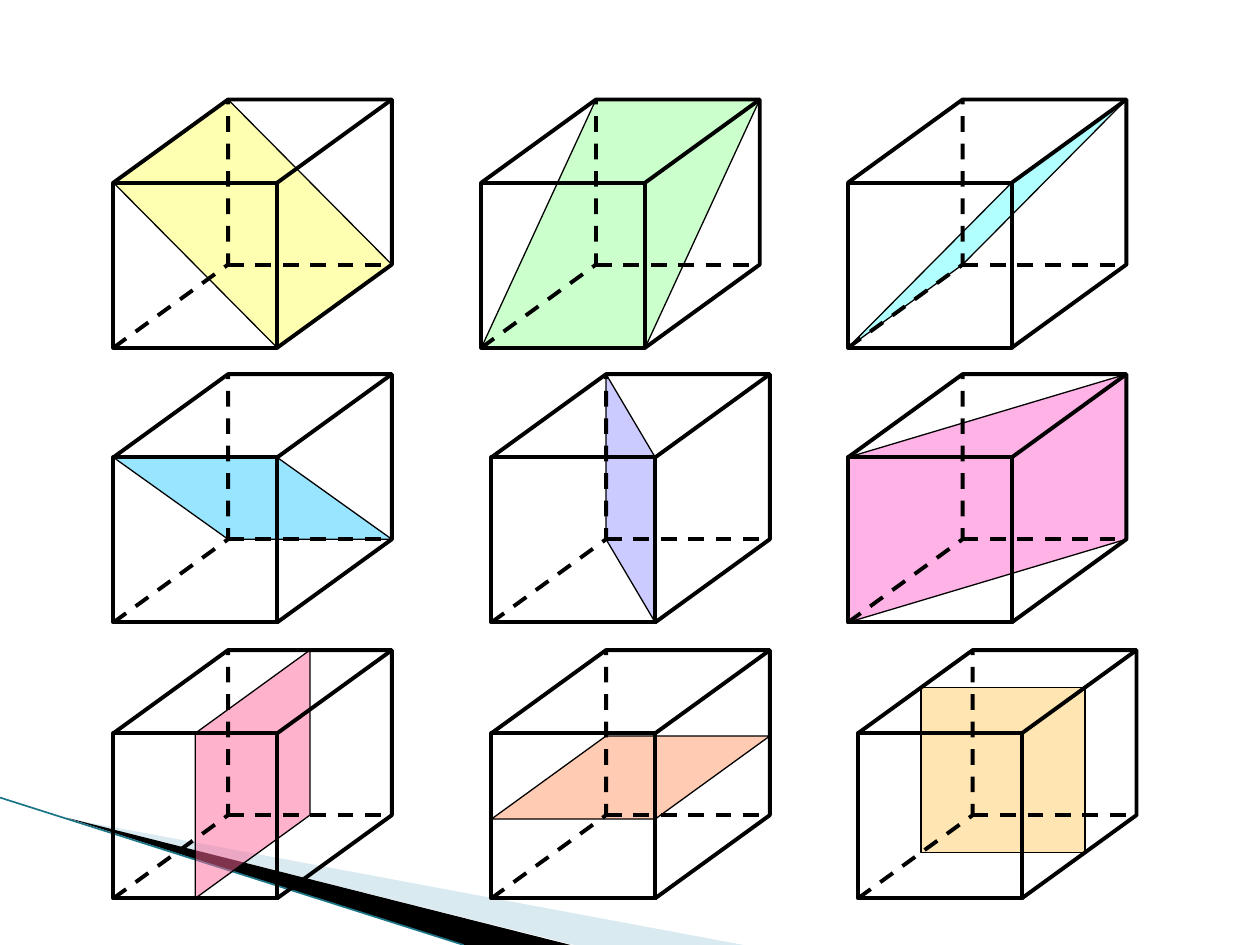
from lxml import etree
from pptx import Presentation, util as u
from pptx.dml.color import RGBColor
from pptx.enum import dml, shapes
from pptx.oxml.ns import qn

BLACK = RGBColor(0x00, 0x00, 0x00)
PALE_BLUE = RGBColor(0xA0, 0xCB, 0xDC)
TEAL = RGBColor(0x1B, 0x75, 0x87)

# Cube size in inches: front face, and the offset of the back face
WIDTH, HEIGHT = 1.3, 1.31
DEPTH_X, DEPTH_Y = 0.91, 0.66

ROWS = (1.45, 3.63, 5.82)  # top of each front face

# Corners in cube units (right, down, back)
FRONT_TOP_LEFT, FRONT_TOP_RIGHT = (0, 0, 0), (1, 0, 0)
FRONT_LOW_LEFT, FRONT_LOW_RIGHT = (0, 1, 0), (1, 1, 0)
BACK_TOP_LEFT, BACK_TOP_RIGHT = (0, 0, 1), (1, 0, 1)
BACK_LOW_LEFT, BACK_LOW_RIGHT = (0, 1, 1), (1, 1, 1)

# Each cube: row, left edge, section colour, section corners
CUBES = [
    (0, 0.9, RGBColor(0xFF, 0xFF, 0x66),
     (FRONT_TOP_LEFT, BACK_TOP_LEFT, BACK_LOW_RIGHT, FRONT_LOW_RIGHT)),
    (0, 3.82, RGBColor(0x99, 0xFF, 0x99),
     (BACK_TOP_LEFT, FRONT_LOW_LEFT, FRONT_LOW_RIGHT, BACK_TOP_RIGHT)),
    (0, 6.73, RGBColor(0x66, 0xFF, 0xFF),
     (FRONT_TOP_RIGHT, BACK_TOP_RIGHT, BACK_LOW_LEFT, FRONT_LOW_LEFT)),
    (1, 0.9, RGBColor(0x33, 0xCC, 0xFF),
     (FRONT_TOP_LEFT, BACK_LOW_LEFT, BACK_LOW_RIGHT, FRONT_TOP_RIGHT)),
    (1, 3.9, RGBColor(0x99, 0x99, 0xFF),
     (BACK_TOP_LEFT, FRONT_TOP_RIGHT, FRONT_LOW_RIGHT, BACK_LOW_LEFT)),
    (1, 6.73, RGBColor(0xFF, 0x66, 0xCC),
     (FRONT_TOP_LEFT, BACK_TOP_RIGHT, BACK_LOW_RIGHT, FRONT_LOW_LEFT)),
    (2, 0.9, RGBColor(0xFF, 0x66, 0x99),
     ((0.5, 0, 0), (0.5, 1, 0), (0.5, 1, 1), (0.5, 0, 1))),
    (2, 3.9, RGBColor(0xFF, 0x99, 0x66),
     ((0, 0.52, 1), (0, 0.52, 0), (1, 0.52, 0), (1, 0.52, 1))),
    (2, 6.81, RGBColor(0xFF, 0xCC, 0x66),
     ((0, 0, 0.55), (1, 0, 0.55), (1, 1, 0.55), (0, 1, 0.55))),
]


def project(origin, corner):
    """Turn a cube corner into a point on the slide, in inches."""
    right, down, back = corner
    return (origin[0] + WIDTH * right + DEPTH_X * back,
            origin[1] + HEIGHT * down - DEPTH_Y * back)


def set_line(shape, width, color=BLACK, dashed=False):
    shape.line.color.rgb = color
    shape.line.width = u.Pt(width)
    if dashed:
        shape.line.dash_style = dml.MSO_LINE.DASH


def set_fill(shape, color, opacity=100):
    shape.fill.solid()
    shape.fill.fore_color.rgb = color
    if opacity < 100:
        tint = shape.fill._xPr.find(".//" + qn("a:srgbClr"))
        etree.SubElement(tint, qn("a:alpha"), val=str(opacity * 1000))


def add_outline(parent, points, closed):
    points = [(u.Inches(x), u.Inches(y)) for x, y in points]
    builder = parent.build_freeform(*points[0])
    builder.add_line_segments(points[1:], close=closed)
    outline = builder.convert_to_shape()
    outline.shadow.inherit = False
    return outline


def add_area(parent, points, color, opacity=100, edge=0):
    area = add_outline(parent, points, True)
    set_fill(area, color, opacity)
    if edge:
        set_line(area, edge)
    else:
        area.line.fill.background()


def add_path(parent, points, dashed=False):
    path = add_outline(parent, points, False)
    path.fill.background()
    set_line(path, 2.25, dashed=dashed)


def add_edge(parent, start, end, width=2.25, color=BLACK, dashed=False):
    edge = parent.add_connector(shapes.MSO_CONNECTOR.STRAIGHT,
                                *[u.Inches(length) for length in (*start, *end)])
    set_line(edge, width, color, dashed)
    etree.SubElement(edge._element.spPr, qn("a:effectLst"))


def add_cube(page, origin):
    def place(*corners):
        return [project(origin, corner) for corner in corners]

    cube = page.shapes.add_group_shape().shapes
    # Visible faces
    front = cube.add_shape(shapes.MSO_SHAPE.RECTANGLE, *[
        u.Inches(length) for length in (*origin, WIDTH, HEIGHT)])
    front.shadow.inherit = False
    front.fill.background()
    set_line(front, 2.25)
    add_path(cube, place(FRONT_TOP_LEFT, BACK_TOP_LEFT, BACK_TOP_RIGHT,
                         BACK_LOW_RIGHT, FRONT_LOW_RIGHT))
    add_edge(cube, *place(FRONT_TOP_RIGHT, BACK_TOP_RIGHT))
    # Hidden edges
    add_edge(cube, *place(BACK_LOW_LEFT, BACK_LOW_RIGHT), dashed=True)
    add_path(cube, place(FRONT_LOW_LEFT, BACK_LOW_LEFT, BACK_TOP_LEFT), dashed=True)


def add_corner_decoration(page):
    add_area(page.shapes, [(0.55, 6.5), (5.9, 7.5), (4.56, 7.5)], PALE_BLUE, 40)
    add_area(page.shapes, [(0.53, 6.49), (4.53, 7.5), (3.68, 7.5)], BLACK)
    add_edge(page.shapes, (0, 6.33), (3.68, 7.5), 0.95, TEAL)


def main():
    deck = Presentation()
    deck.slide_width, deck.slide_height = u.Inches(10), u.Inches(7.5)
    page = deck.slides.add_slide(deck.slide_layouts[6])
    add_corner_decoration(page)

    # Coloured sections lie behind the cube edges
    for row, left, color, corners in CUBES:
        points = [project((left, ROWS[row]), corner) for corner in corners]
        add_area(page.shapes, points, color, 50, 0.75)
    for row, left, _, _ in CUBES:
        add_cube(page, (left, ROWS[row]))

    deck.save("out.pptx")


if __name__ == "__main__":
    main()
